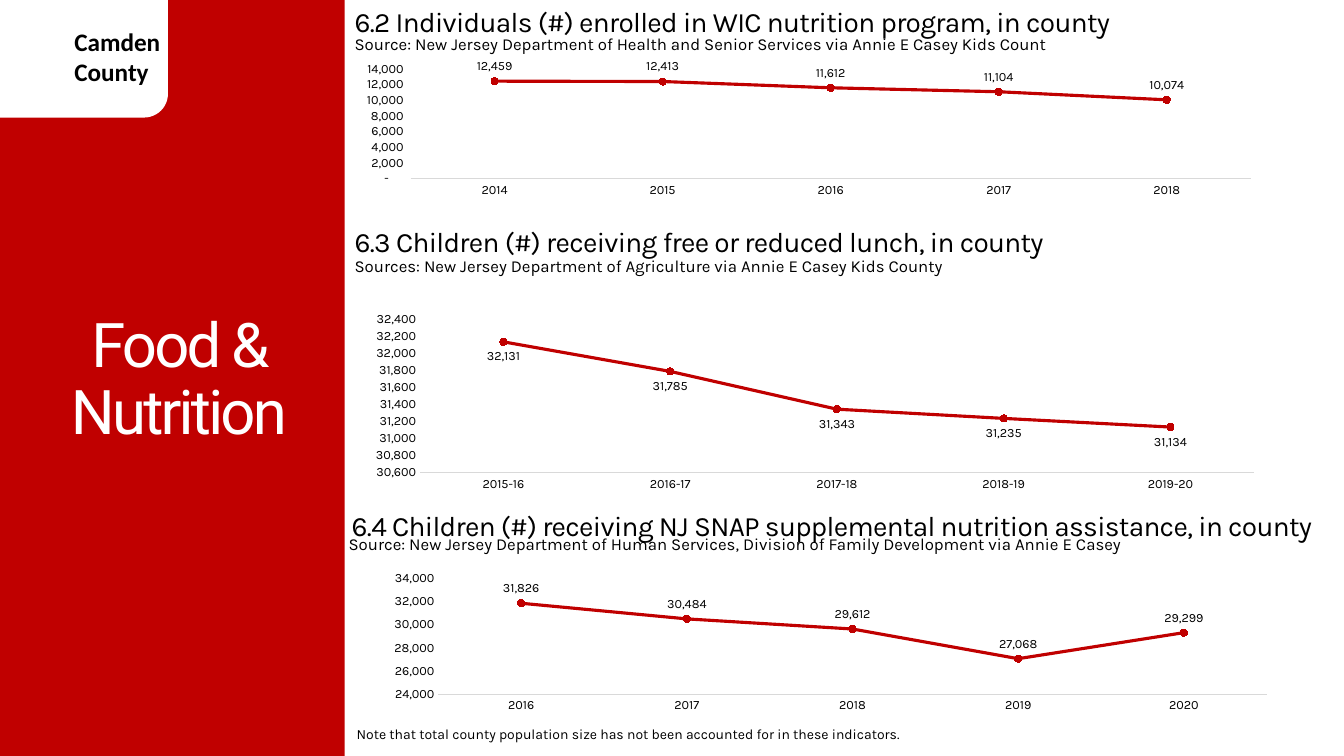
from lxml.etree import SubElement
from pptx import Presentation
from pptx.chart.data import CategoryChartData
from pptx.dml.color import RGBColor
from pptx.enum.chart import (XL_CHART_TYPE as ChartType, XL_LABEL_POSITION as LabelPosition,
                             XL_MARKER_STYLE as MarkerStyle, XL_TICK_MARK as TickMark)
from pptx.enum.shapes import MSO_SHAPE as Shape
from pptx.enum.text import MSO_ANCHOR as Anchor, PP_ALIGN as Align
from pptx.oxml.ns import qn
from pptx.util import Pt

RED = RGBColor(0xC0, 0x00, 0x00)
BLACK = RGBColor(0x00, 0x00, 0x00)
WHITE = RGBColor(0xFF, 0xFF, 0xFF)
AXIS_GRAY = RGBColor(0xD9, 0xD9, 0xD9)

COUNTY = ["Camden", "County"]
TOPIC = "Food & Nutrition"
NOTE = "Note that total county population size has not been accounted for in these indicators."
ACCOUNTING = '_(* #,##0_);_(* \\(#,##0\\);_(* "-"??_);_(@_)'
THOUSANDS = "#,##0"

# Boxes are (left, top, width, height) in points; plots are fractions of the chart.
INDICATORS = [
    dict(title="6.2 Individuals (#) enrolled in WIC nutrition program, in county",
         title_box=(246.2, 0, 710, 31.5),
         source="Source: New Jersey Department of Health and Senior Services via Annie E Casey Kids Count",
         source_box=(246.2, 20.9, 662, 21.8),
         years=["2014", "2015", "2016", "2017", "2018"],
         counts=[12459, 12413, 11612, 11104, 10074],
         chart_box=(249.8, 41.8, 658.8, 110.2), plot=(0.066, 0.069, 0.911, 0.71),
         scale=(0, 14000, 2000), number_format=ACCOUNTING, labels=LabelPosition.ABOVE),
    dict(title="6.3 Children (#) receiving free or reduced lunch, in county",
         title_box=(246.2, 157, 710, 31.5),
         source="Sources: New Jersey Department of Agriculture via Annie E Casey Kids County",
         source_box=(246.2, 179.3, 710, 21.8),
         years=["2015-16", "2016-17", "2017-18", "2018-19", "2019-20"],
         counts=[32131, 31785, 31343, 31235, 31134],
         chart_box=(255.6, 220.3, 653.8, 133.9), plot=(0.068, 0.056, 0.911, 0.821),
         scale=(30600, 32400, 200), number_format=THOUSANDS, labels=LabelPosition.BELOW),
    dict(title="6.4 Children (#) receiving NJ SNAP supplemental nutrition assistance, in county",
         title_box=(244.1, 360, 710, 31.5),
         source="Source: New Jersey Department of Human Services, Division of Family Development"
                " via Annie E Casey",
         source_box=(241.9, 378, 663.8, 36),
         years=["2016", "2017", "2018", "2019", "2020"],
         counts=[31826, 30484, 29612, 27068, 29299],
         chart_box=(255.6, 407.5, 653.8, 111.6), plot=(0.088, 0.046, 0.905, 0.748),
         scale=(24000, 34000, 2000), number_format=THOUSANDS, labels=LabelPosition.ABOVE),
]


def points(box):
    return [Pt(length) for length in box]


def style(font, name, size, color=BLACK, bold=False):
    font.name, font.size, font.bold = name, Pt(size), bold
    font.color.rgb = color


def add_panel(slide, kind, box, color):
    panel = slide.shapes.add_shape(kind, *points(box))
    panel.shadow.inherit = False
    panel.fill.solid()
    panel.fill.fore_color.rgb = color
    panel.line.fill.background()


def add_text(slide, box, lines, name, size, color=BLACK, bold=False, tracking=0):
    """Add a wrapped text box; tracking is letter spacing in points."""
    frame = slide.shapes.add_textbox(*points(box)).text_frame
    frame.word_wrap = True
    for number, line in enumerate(lines):
        paragraph = frame.add_paragraph() if number else frame.paragraphs[0]
        run = paragraph.add_run()
        run.text = line
        style(paragraph.font, name, size, color, bold)
        if tracking:
            run.font._element.set("spc", str(round(tracking * 100)))
    return frame


def set_plot_area(chart, plot):
    """Fix the inner plot area at the given fractions of the chart."""
    plot_area = chart._chartSpace.chart.plotArea
    layout = plot_area.find(qn("c:layout"))
    if layout is None:
        layout = SubElement(plot_area, qn("c:layout"))
        plot_area.insert(0, layout)
    manual = SubElement(layout, qn("c:manualLayout"))
    settings = [("layoutTarget", "inner"), ("xMode", "edge"), ("yMode", "edge"),
                *zip("xywh", plot)]
    for tag, value in settings:
        SubElement(manual, qn(f"c:{tag}")).set("val", str(value))


def add_line_chart(slide, indicator):
    data = CategoryChartData(number_format=indicator["number_format"])
    data.categories = indicator["years"]
    data.add_series("Series 1", indicator["counts"])
    chart = slide.shapes.add_chart(
        ChartType.LINE_MARKERS, *points(indicator["chart_box"]), data).chart
    chart.has_legend = chart.has_title = False
    style(chart.font, "Calibri", 10)
    set_plot_area(chart, indicator["plot"])

    for axis in (chart.category_axis, chart.value_axis):
        axis.has_major_gridlines = False
        axis.major_tick_mark = axis.minor_tick_mark = TickMark.NONE
        style(axis.tick_labels.font, "Karla", 9)
    chart.category_axis.format.line.color.rgb = AXIS_GRAY
    chart.category_axis.format.line.width = Pt(0.75)
    counts_axis = chart.value_axis
    counts_axis.format.line.fill.background()
    counts_axis.minimum_scale, counts_axis.maximum_scale, counts_axis.major_unit = indicator["scale"]

    chart.plots[0].vary_by_categories = False
    trend = chart.plots[0].series[0]
    trend.smooth = False
    trend.format.line.color.rgb = RED
    trend.format.line.width = Pt(2.25)
    trend.marker.style, trend.marker.size = MarkerStyle.CIRCLE, 5
    trend.marker.format.fill.solid()
    trend.marker.format.fill.fore_color.rgb = RED
    trend.marker.format.line.color.rgb = RED

    labels = trend.data_labels
    labels.show_value = True
    labels.position = indicator["labels"]
    style(labels.font, "Karla", 9)
    for numbers in (labels, counts_axis.tick_labels):
        numbers.number_format = indicator["number_format"]
        numbers.number_format_is_linked = False


def main():
    deck = Presentation()
    deck.slide_width, deck.slide_height = Pt(960), Pt(540)
    slide = deck.slides.add_slide(deck.slide_layouts[6])

    add_panel(slide, Shape.RECTANGLE, (0, 0, 246.2, 540), RED)
    add_panel(slide, Shape.ROUNDED_RECTANGLE, (-24, -18, 144, 102), WHITE)
    add_text(slide, (46, 15.1, 84, 51), COUNTY, "Calibri", 18, bold=True)

    topic = add_text(slide, (0, 56.2, 255.6, 432), [TOPIC], "Roboto", 44, WHITE, tracking=-2)
    topic.vertical_anchor = Anchor.MIDDLE
    topic.paragraphs[0].alignment = Align.CENTER
    topic.paragraphs[0].line_spacing = 0.9

    for indicator in INDICATORS:
        add_text(slide, indicator["title_box"], [indicator["title"]], "Karla", 20, tracking=-0.5)
        add_text(slide, indicator["source_box"], [indicator["source"]], "Karla", 12)
        add_line_chart(slide, indicator)
    add_text(slide, (247.7, 514.8, 524, 31.5), [NOTE], "Karla", 10)

    deck.save("out.pptx")


if __name__ == "__main__":
    main()
